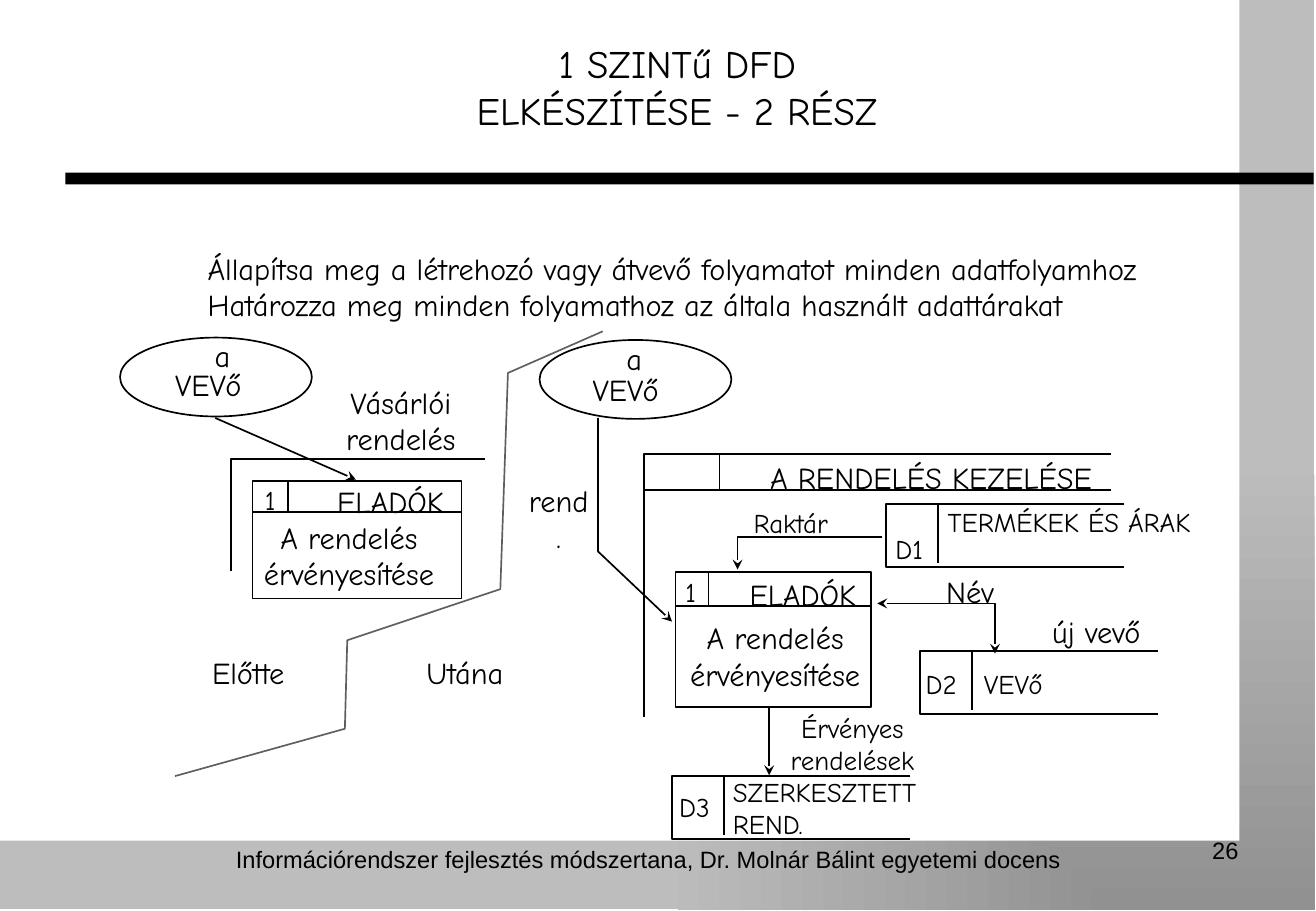
from dataclasses import dataclass

import lxml.etree
import pptx
import pptx.dml.color
import pptx.enum.shapes
import pptx.enum.text
import pptx.oxml.ns
import pptx.util

Cm = pptx.util.Cm
Shape = pptx.enum.shapes.MSO_SHAPE
Align = pptx.enum.text.PP_ALIGN
qn = pptx.oxml.ns.qn
Point = tuple[float, float]

BLACK, GREY = "000000", "5F5F5F"


# Elements of the slide, all lengths in centimetres
@dataclass
class Label:
    text: str
    left: float
    top: float
    width: float
    height: float
    size: int = 18
    align: Align = Align.CENTER
    font: str = "Comic Neue"
    inset: Point = (0, 0)


@dataclass
class Route:
    points: list[Point]
    color: str = BLACK
    head: bool = False
    tail: bool = False


@dataclass
class Process:
    left: float
    top: float
    width: float
    height: float
    header: float
    number_width: float


@dataclass
class Store:
    left: float
    top: float
    width: float = 4.98
    height: float = 1.32
    code_width: float = 1.09
    divider: float = 1.24


FOOTER = {"size": 14, "font": "Arial", "inset": (0.25, 0.13)}
SMALL = {"size": 16, "align": Align.LEFT}

LABELS = [
    # Footer, title and instructions
    Label("Információrendszer fejlesztés módszertana, Dr. Molnár Bálint egyetemi docens",
          3.96, 17.53, 19.2, 1.52, **FOOTER),
    Label("26", 19.71, 17.35, 6.43, 1.32, align=Align.RIGHT, **FOOTER),
    Label("1 SZINTű DFD\nELKÉSZÍTÉSE - 2 RÉSZ", 3.23, 0.84, 21.87, 2.59, 23),
    Label("Állapítsa meg a létrehozó vagy átvevő folyamatot minden adatfolyamhoz\n"
          "Határozza meg minden folyamathoz az általa használt adattárakat",
          4.34, 5.23, 22.66, 1.75, align=Align.LEFT),
    # Before
    Label("a", 4.47, 7.06, 0.36, 0.33),
    Label("VEVő", 3.2, 7.65, 2.31, 0.74),
    Label("Vásárlói rendelés", 6.6, 8.03, 3.56, 1.55),
    Label("1", 5.54, 10.11, 0.3, 0.53, **SMALL),
    Label("ELADÓK", 6.73, 10.11, 2.87, 0.53),
    Label("A rendelés érvényesítése", 5.44, 10.85, 3.71, 1.52),
    Label("Előtte", 4.29, 13.69, 1.8, 0.41),
    # After
    Label("Utána", 8.74, 13.69, 1.96, 0.41),
    Label("a", 13.08, 7.11, 0.36, 0.3),
    Label("VEVő", 11.86, 7.77, 2.44, 0.64),
    Label("rend.", 11.02, 10.08, 1.32, 0.33),
    Label("A RENDELÉS KEZELÉSE", 15.21, 9.6, 8.51, 0.58),
    Label("1", 14.33, 12.04, 0.3, 0.61, **SMALL),
    Label("ELADÓK", 15.44, 12.04, 2.69, 0.79),
    Label("A rendelés érvényesítése", 14.35, 12.95, 3.71, 1.4),
    # Stores and flows
    Label("Raktár", 15.54, 10.59, 1.98, 0.58, 16),
    Label("D1", 18.72, 11.13, 0.69, 0.38, **SMALL),
    Label("TERMÉKEK ÉS ÁRAK", 19.81, 10.57, 5.54, 0.79, **SMALL),
    Label("Név", 19.48, 11.99, 1.6, 0.53),
    Label("új vevő", 21.79, 12.83, 2.26, 0.69),
    Label("D2", 19.35, 13.97, 1.02, 0.36, **SMALL),
    Label("VEVő", 20.57, 13.97, 3.18, 0.43, **SMALL),
    Label("Érvényes\nrendelések", 16.26, 14.88, 3.12, 1.27, 16),
    Label("D3", 14.2, 16.54, 0.86, 0.76, **SMALL),
    Label("SZERKESZTETT REND.", 15.32, 16.21, 4.93, 1.3, **SMALL),
]

CUSTOMERS = [(2.51, 7.06), (11.28, 7.11)]
PROCESSES = [Process(5.28, 10.06, 4.37, 2.46, 0.64, 0.74),
             Process(14.12, 11.96, 4.09, 2.82, 0.71, 0.69)]
STORES = [Store(18.52, 10.54), Store(19.23, 13.61), Store(14.05, 16.23)]

ROUTES = [
    # System frames
    Route([(10.13, 9.6), (4.83, 9.6), (4.83, 11.94)]),
    Route([(23.22, 9.5), (13.46, 9.5), (13.46, 14.99)]),
    Route([(13.46, 10.24), (23.22, 10.24)]),
    Route([(15.04, 9.5), (15.04, 10.24)]),
    # Data flows
    Route([(4.5, 8.74), (7.44, 10.03)], tail=True),
    Route([(12.5, 8.74), (12.5, 11.53), (14.05, 13)], tail=True),
    Route([(18.44, 11.23), (15.42, 11.23), (15.42, 11.91)], tail=True),
    Route([(18.34, 12.62), (20.8, 12.62), (20.8, 13.67)], head=True, tail=True),
    Route([(16.08, 14.76), (16.08, 16.21)], tail=True),
    # Border between before and after
    Route([(12.6, 6.93), (10.62, 7.8), (10.46, 12.32), (7.26, 13.39),
           (7.21, 15.24), (3.66, 16.23)], GREY),
]


def rgb(color: str) -> pptx.dml.color.RGBColor:
    return pptx.dml.color.RGBColor.from_string(color)


def draw_block(page, kind: Shape, left: float, top: float, width: float, height: float,
               fill: str = "", line: str = ""):
    block = page.shapes.add_shape(kind, Cm(left), Cm(top), Cm(width), Cm(height))
    block.shadow.inherit = False
    block.fill.background()
    block.line.fill.background()
    if fill:
        block.fill.solid()
        block.fill.fore_color.rgb = rgb(fill)
    if line:
        block.line.color.rgb = rgb(line)
        block.line.width = pptx.util.Pt(1)
    return block


def draw_backdrop(page) -> None:
    backdrop = draw_block(page, Shape.RECTANGLE, 0, 0, 27.48, 19.02)
    backdrop.fill.gradient()
    for stop, color, position in zip(backdrop.fill.gradient_stops, ("919191", "BDBDBD"), (0, 1)):
        stop.color.rgb = rgb(color)
        stop.position = position
    gradient = backdrop.element.spPr.find(qn("a:gradFill"))
    gradient.remove(gradient.find(qn("a:lin")))
    corner = lxml.etree.SubElement(gradient, qn("a:path"), path="rect")
    lxml.etree.SubElement(corner, qn("a:fillToRect"), l="100000", t="100000")
    draw_block(page, Shape.RECTANGLE, 0, 0, 25.91, 17.58, fill="FFFFFF")
    draw_block(page, Shape.RECTANGLE, 1.37, 3.61, 26.09, 0.25, fill=BLACK)


def draw_route(page, route: Route) -> None:
    points = [(Cm(x), Cm(y)) for x, y in route.points]
    if len(points) == 2:
        stroke = page.shapes.add_connector(
            pptx.enum.shapes.MSO_CONNECTOR.STRAIGHT, *points[0], *points[1])
    else:
        builder = page.shapes.build_freeform(*points[0])
        builder.add_line_segments(points[1:], close=False)
        stroke = builder.convert_to_shape()
        stroke.fill.background()
    stroke.line.color.rgb = rgb(route.color)
    stroke.line.width = pptx.util.Pt(1)
    properties = stroke.element.spPr
    for end, shown in (("a:headEnd", route.head), ("a:tailEnd", route.tail)):
        if shown:
            lxml.etree.SubElement(properties.find(qn("a:ln")), qn(end), type="stealth")
    lxml.etree.SubElement(properties, qn("a:effectLst"))


def draw_process(page, item: Process) -> None:
    draw_block(page, Shape.RECTANGLE, item.left, item.top, item.width, item.height, line=BLACK)
    bottom, divider = item.top + item.header, item.left + item.number_width
    draw_route(page, Route([(item.left, bottom), (item.left + item.width, bottom)]))
    draw_route(page, Route([(divider, item.top), (divider, bottom)]))


def draw_store(page, item: Store) -> None:
    right, bottom = item.left + item.width, item.top + item.height
    divider = item.left + item.code_width
    draw_route(page, Route([(right, item.top), (item.left, item.top),
                            (item.left, bottom), (right, bottom)]))
    draw_route(page, Route([(divider, item.top), (divider, item.top + item.divider)]))


def draw_label(page, label: Label) -> None:
    box = page.shapes.add_textbox(Cm(label.left), Cm(label.top), Cm(label.width), Cm(label.height))
    frame = box.text_frame
    side, end = (Cm(length) for length in label.inset)
    frame_format = {"word_wrap": True, "margin_left": side, "margin_right": side,
                    "margin_top": end, "margin_bottom": end}
    for name, value in frame_format.items():
        setattr(frame, name, value)
    for index, text in enumerate(label.text.split("\n")):
        para = frame.add_paragraph() if index else frame.paragraphs[0]
        para.alignment = label.align
        span = para.add_run()
        span.text = text
        for name, value in {"name": label.font, "size": pptx.util.Pt(label.size)}.items():
            setattr(span.font, name, value)
        span.font.color.rgb = rgb(BLACK)


def main() -> None:
    deck = pptx.Presentation()
    deck.slide_width, deck.slide_height = Cm(27.51), Cm(19.05)
    page = deck.slides.add_slide(deck.slide_layouts[6])
    draw_backdrop(page)
    for left, top in CUSTOMERS:
        draw_block(page, Shape.OVAL, left, top, 4.01, 1.65, line=BLACK)
    for draw, items in ((draw_process, PROCESSES), (draw_store, STORES),
                        (draw_route, ROUTES), (draw_label, LABELS)):
        for item in items:
            draw(page, item)
    deck.save("out.pptx")


if __name__ == "__main__":
    main()
